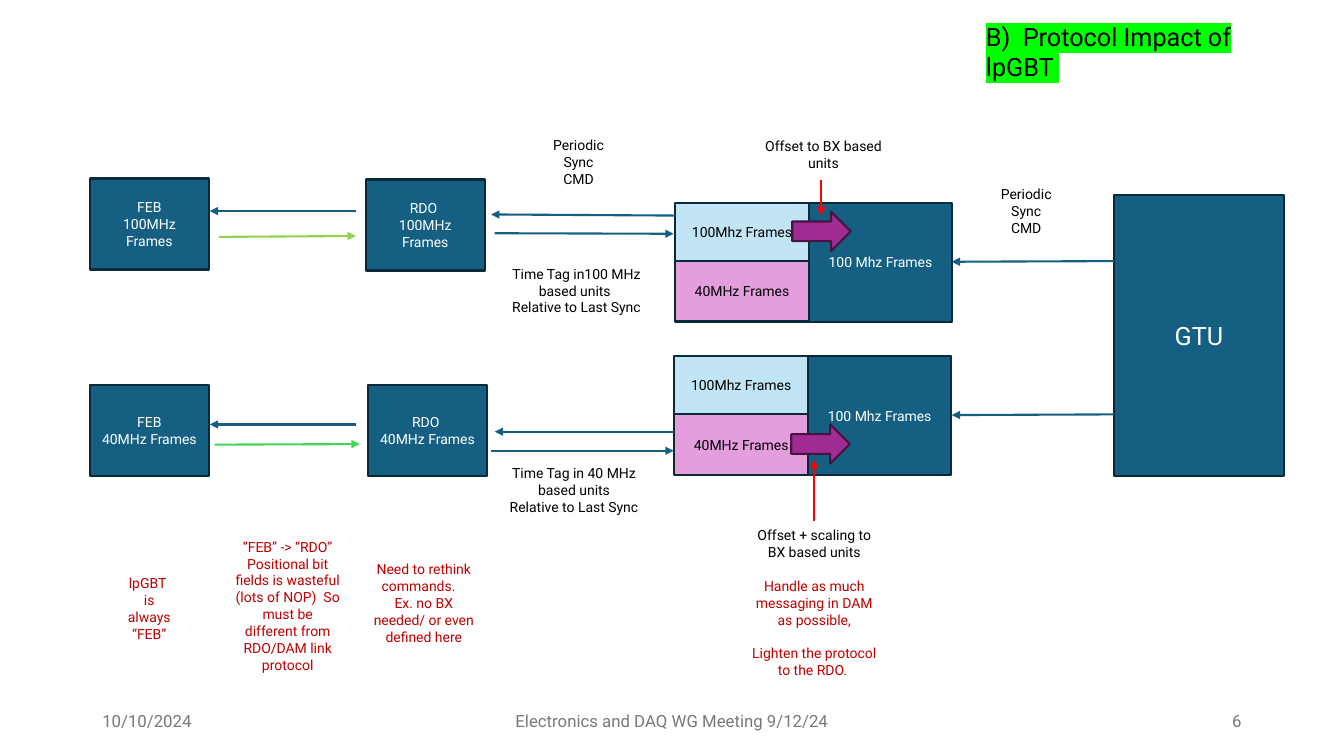
from lxml import etree
from pptx import Presentation
from pptx import util as u
from pptx.dml import color
from pptx.enum import shapes, text
from pptx.oxml import ns

COLORS = {
    "blue": "156082", "navy": "092A39", "sky": "C1E5F5", "pink": "E59EDD",
    "purple": "A02B93", "plum": "461340", "red": "FF0000", "note": "C00000",
    "lime": "92D050", "green": "47D45A", "mark": "00FF00",
    "white": "FFFFFF", "black": "000000", "gray": "797979",
}
ALIGN = {"l": text.PP_ALIGN.LEFT, "c": text.PP_ALIGN.CENTER, "r": text.PP_ALIGN.RIGHT}
TOP, MIDDLE = text.MSO_ANCHOR.TOP, text.MSO_ANCHOR.MIDDLE


def rgb(name):
    return color.RGBColor.from_string(COLORS[name])


def set_attrs(obj, values):
    for name, value in values.items():
        setattr(obj, name, value)


class Diagram:
    def __init__(self, s, font="Roboto", line_width=1.5):
        self.s, self.font, self.line_width = s, font, line_width

    def add_words(self, sp, words, size=10, ink="black", align="c", anchor=TOP, gap=0):
        """Fill a shape with one paragraph per line of words, gap points apart."""
        tf = sp.text_frame
        set_attrs(tf, {
            "word_wrap": True, "auto_size": text.MSO_AUTO_SIZE.NONE,
            "vertical_anchor": anchor,
            "margin_left": u.Pt(7.2), "margin_right": u.Pt(7.2),
            "margin_top": u.Pt(3.6), "margin_bottom": u.Pt(3.6),
        })
        for i, line in enumerate(words.split("\n")):
            p = tf.add_paragraph() if i else tf.paragraphs[0]
            set_attrs(p, {"alignment": ALIGN[align], "line_spacing": 1.0,
                          "space_before": u.Pt(gap if i else 0)})
            r = p.add_run()
            r.text = line
            set_attrs(r.font, {"name": self.font, "size": u.Pt(size)})
            r.font.color.rgb = rgb(ink)

    def title(self, words, x, y, w, h):
        sp = self.s.shapes.title
        set_attrs(sp, {"left": u.Pt(x), "top": u.Pt(y), "width": u.Pt(w), "height": u.Pt(h)})
        self.add_words(sp, words, size=18, align="l")
        for p in sp.text_frame.paragraphs:
            for r in p.runs:
                mark = etree.Element(ns.qn("a:highlight"))
                etree.SubElement(mark, ns.qn("a:srgbClr"), val=COLORS["mark"])
                r.font._element.find(ns.qn("a:solidFill")).addnext(mark)

    def label(self, words, x, y, w, h, **style):
        sp = self.s.shapes.add_textbox(u.Pt(x), u.Pt(y), u.Pt(w), u.Pt(h))
        self.add_words(sp, words, **style)

    def shape(self, kind, x, y, w, h, fill, line):
        sp = self.s.shapes.add_shape(kind, u.Pt(x), u.Pt(y), u.Pt(w), u.Pt(h))
        sp.shadow.inherit = False
        sp.fill.solid()
        sp.fill.fore_color.rgb = rgb(fill)
        sp.line.color.rgb = rgb(line)
        sp.line.width = u.Pt(self.line_width)
        return sp

    def box(self, words, x, y, w, h, fill="blue", ink="white", size=10):
        sp = self.shape(shapes.MSO_SHAPE.RECTANGLE, x, y, w, h, fill, "navy")
        self.add_words(sp, words, size=size, ink=ink, anchor=MIDDLE)

    def block_arrow(self, x, y, w=41.8, h=28.1):
        self.shape(shapes.MSO_SHAPE.RIGHT_ARROW, x, y, w, h, "purple", "plum")

    def arrow(self, x1, y1, x2, y2, ink="blue"):
        """Draw a line with its arrowhead at the second point."""
        c = self.s.shapes.add_connector(
            shapes.MSO_CONNECTOR.STRAIGHT, u.Pt(x1), u.Pt(y1), u.Pt(x2), u.Pt(y2))
        c.line.color.rgb = rgb(ink)
        c.line.width = u.Pt(self.line_width)
        sp_pr = c._element.spPr
        etree.SubElement(sp_pr.find(ns.qn("a:ln")), ns.qn("a:tailEnd"), type="triangle")
        etree.SubElement(sp_pr, ns.qn("a:effectLst"))

    def dam(self, x, y):
        """Draw a block with two input formats stacked left of its output format."""
        left, upper, lower = 95.6, 41.8, 43.2
        self.box("100 Mhz Frames", x + left, y, 102.2, upper + lower)
        self.box("40MHz Frames", x, y + upper, left, lower, "pink", "black")
        self.box("100Mhz Frames", x, y, left, upper, "sky", "black")


def main():
    prs = Presentation()
    prs.slide_width, prs.slide_height = u.Pt(960), u.Pt(540)
    d = Diagram(prs.slides.add_slide(prs.slide_layouts[5]))

    d.title("B)  Protocol Impact of lpGBT ", 697, 11.5, 216, 50)
    for words, x, w, align in (
            ("10/10/2024", 66, 216, "l"),
            ("Electronics and DAQ WG Meeting 9/12/24", 318, 324, "c"),
            ("6", 678, 216, "r")):
        d.label(words, x, 500.5, w, 28.8, size=12, ink="gray", align=align, anchor=MIDDLE)

    d.box("GTU", 795.6, 139, 121.7, 201, size=18)
    for rate, feb_y, rdo_x, rdo_y, dam_x, dam_y in (
            ("100MHz", 127.5, 261.2, 128.2, 482.2, 144.7),
            ("40MHz", 275, 262.8, 275, 481.6, 254.2)):
        d.box(f"FEB\n{rate} Frames", 64.2, feb_y, 85, 65)
        d.box(f"RDO \n{rate} Frames", rdo_x, rdo_y, 85, 65)
        d.dam(dam_x, dam_y)
        d.arrow(795.6, dam_y + 41.8, 679.8, dam_y + 42.3)
    d.block_arrow(565.9, 151.2)
    d.block_arrow(565.2, 303.1)

    for link in (
            (254.2, 150.8, 149.8, 150.8), (254.2, 303.2, 149.8, 303.2),
            (156.5, 169.2, 254.2, 168.6, "lime"), (153.4, 317.6, 257, 317.2, "green"),
            (482.4, 154, 350.8, 153.2), (353.4, 166.6, 481.2, 167),
            (481.2, 308.4, 353.4, 308.4), (350.8, 322, 481.2, 322),
            (586.6, 128.8, 586.6, 154, "red"), (581.6, 372.2, 581.6, 328.4, "red")):
        d.arrow(*link)

    for words, x, y, w, h in (
            ("Periodic Sync\nCMD", 699.2, 129, 67.6, 44),
            ("Periodic Sync\nCMD", 379.4, 94.2, 67.6, 44),
            ("Time Tag in100 MHz based units \nRelative to Last Sync", 357.8, 186, 108, 44),
            ("Time Tag in 40 MHz based units\nRelative to Last Sync", 356, 328.6, 108, 44),
            ("Offset to BX based units", 534.2, 94.6, 108, 31.6),
            ("Offset + scaling to BX based units", 527.6, 372.6, 108, 31.6)):
        d.label(words, x, y, w, h)

    for words, x, y, w, h, gap in (
            ("lpGBT \nis always\n“FEB”", 81.4, 407, 50.4, 56, 0),
            ("“FEB” -> “RDO”\nPositional bit fields is wasteful (lots of NOP)  So must be "
             "different from RDO/DAM link protocol", 160.8, 381, 89.4, 92, 0),
            ("Need to rethink commands.    Ex. no BX needed/ or even defined here",
             258, 397, 89.4, 68, 0),
            ("Handle as much messaging in DAM as possible,\nLighten the protocol to the RDO. ",
             527.6, 409, 108, 80, 12)):
        d.label(words, x, y, w, h, ink="note", gap=gap)

    prs.save("out.pptx")


if __name__ == "__main__":
    main()
